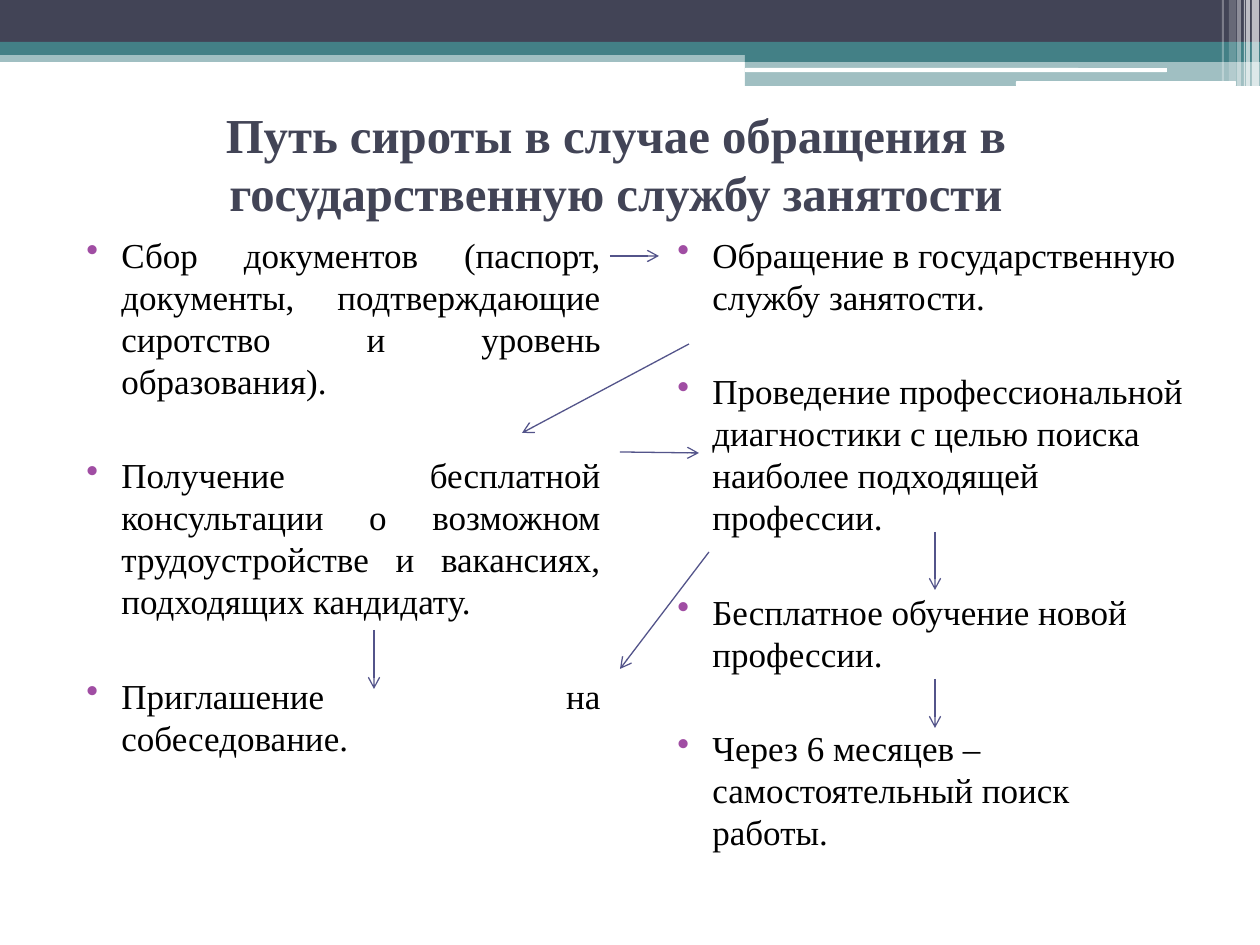
import pptx
import pptx.dml.color
import pptx.enum.shapes
import pptx.enum.text
import pptx.oxml
import pptx.oxml.ns
import pptx.util
from lxml import etree

EMU_PER_PX = 914400 // 126
RGBColor = pptx.dml.color.RGBColor
Align = pptx.enum.text.PP_ALIGN
Anchor = pptx.enum.text.MSO_ANCHOR
Shapes = pptx.enum.shapes.MSO_SHAPE

SLATE = RGBColor(0x42, 0x44, 0x56)
TEAL = RGBColor(0x43, 0x80, 0x86)
WHITE = RGBColor(0xFF, 0xFF, 0xFF)
BLACK = RGBColor(0, 0, 0)
PURPLE = RGBColor(0xA0, 0x4D, 0xA3)
INDIGO = RGBColor(0x53, 0x54, 0x8A)
FONT = "Times New Roman"

# left, top, width, height, colour, opacity in percent
BANDS = [
    (0, 50, 1260, 12, TEAL, 50),
    (0, 0, 1260, 42, SLATE, 100),
    (0, 42, 1260, 13, TEAL, 100),
    (745, 49, 515, 13, TEAL, 100),
    (745, 61, 515, 25, TEAL, 50),
]
ROUNDED_BARS = [(745, 68, 422, 4), (1016, 81, 220, 5)]
# left, width, height, opacity in percent
STRIPES = [
    (1252, 7, 86, 65), (1246, 4, 86, 65), (1244, 1, 86, 60),
    (1237, 4, 86, 40), (1229, 7, 81, 20), (1222, 2, 81, 30),
]

TITLE = "Путь сироты в случае обращения в государственную службу занятости"
LEFT_STEPS = [
    "Сбор документов (паспорт, документы, подтверждающие сиротство и уровень образования).",
    "Получение бесплатной консультации о возможном трудоустройстве и вакансиях, подходящих кандидату.",
    "Приглашение на собеседование.",
]
RIGHT_STEPS = [
    "Обращение в государственную службу занятости.",
    "Проведение профессиональной диагностики с целью поиска наиболее подходящей профессии.",
    "Бесплатное обучение новой профессии.",
    "Через 6 месяцев – самостоятельный поиск работы.",
]
# start x, start y, end x, end y
ARROWS = [
    (374, 630, 374, 689),
    (610, 256, 659, 256),
    (689, 344, 522, 433),
    (620, 452, 699, 453),
    (935, 532, 935, 590),
    (935, 679, 935, 728),
    (709, 552, 620, 669),
]


def px(value):
    return pptx.util.Emu(value * EMU_PER_PX)


def add_block(slide, box, color, opacity=100, kind=Shapes.RECTANGLE):
    shape = slide.shapes.add_shape(kind, *map(px, box))
    shape.shadow.inherit = False
    shape.fill.solid()
    shape.fill.fore_color.rgb = color
    shape.line.fill.background()
    if opacity < 100:
        color_element = shape.fill._xPr.find(".//" + pptx.oxml.ns.qn("a:srgbClr"))
        alpha = etree.SubElement(color_element, pptx.oxml.ns.qn("a:alpha"))
        alpha.set("val", str(opacity * 1000))
    return shape


def add_bullet(paragraph):
    """Give the paragraph a hanging purple bullet."""
    properties = paragraph._p.get_or_add_pPr()
    properties.set("marL", str(px(50)))
    properties.set("indent", str(-px(35)))
    color = etree.SubElement(properties, pptx.oxml.ns.qn("a:buClr"))
    etree.SubElement(color, pptx.oxml.ns.qn("a:srgbClr")).set("val", str(PURPLE))
    etree.SubElement(properties, pptx.oxml.ns.qn("a:buChar")).set("char", "•")


def add_text(slide, box, texts, *, size, color=BLACK, bold=False, align=Align.LEFT,
             anchor=Anchor.TOP, bullets=False, first_gap=0, gap=0):
    frame = slide.shapes.add_textbox(*map(px, box)).text_frame
    frame.word_wrap = True
    frame.vertical_anchor = anchor
    for index, text in enumerate(texts):
        paragraph = frame.add_paragraph() if index else frame.paragraphs[0]
        paragraph.alignment = align
        paragraph.space_before = pptx.util.Pt(gap if index else first_gap)
        if bullets:
            add_bullet(paragraph)
        run = paragraph.add_run()
        run.text = text
        run.font.name = FONT
        run.font.size = pptx.util.Pt(size)
        run.font.bold = bold
        run.font.color.rgb = color


def add_arrow(slide, points):
    connector = slide.shapes.add_connector(
        pptx.enum.shapes.MSO_CONNECTOR.STRAIGHT, *map(px, points))
    connector.line.color.rgb = INDIGO
    connector.line.width = pptx.util.Pt(0.75)
    line = connector.line._get_or_add_ln()
    etree.SubElement(line, pptx.oxml.ns.qn("a:tailEnd")).set("type", "arrow")
    etree.SubElement(connector._element.spPr, pptx.oxml.ns.qn("a:effectLst"))


def add_header(slide):
    for *box, color, opacity in BANDS:
        add_block(slide, box, color, opacity)
    for box in ROUNDED_BARS:
        bar = add_block(slide, box, WHITE, kind=Shapes.ROUNDED_RECTANGLE)
        bar.adjustments[0] = 0.17
    for left, width, height, opacity in STRIPES:
        add_block(slide, (left, 0, width, height), WHITE, opacity)


def main():
    presentation = pptx.Presentation()
    presentation.slide_width = px(1260)
    presentation.slide_height = px(945)
    slide = presentation.slides.add_slide(presentation.slide_layouts[6])

    add_header(slide)
    add_text(slide, (39, 89, 1154, 148), [TITLE], size=27.9, color=SLATE, bold=True,
             align=Align.CENTER, anchor=Anchor.MIDDLE)
    steps_format = dict(size=20, bullets=True, first_gap=3, gap=30)
    add_text(slide, (59, 227, 554, 624), LEFT_STEPS, align=Align.JUSTIFY, **steps_format)
    add_text(slide, (650, 227, 554, 689), RIGHT_STEPS, **steps_format)
    for points in ARROWS:
        add_arrow(slide, points)

    presentation.save("out.pptx")


if __name__ == "__main__":
    main()
